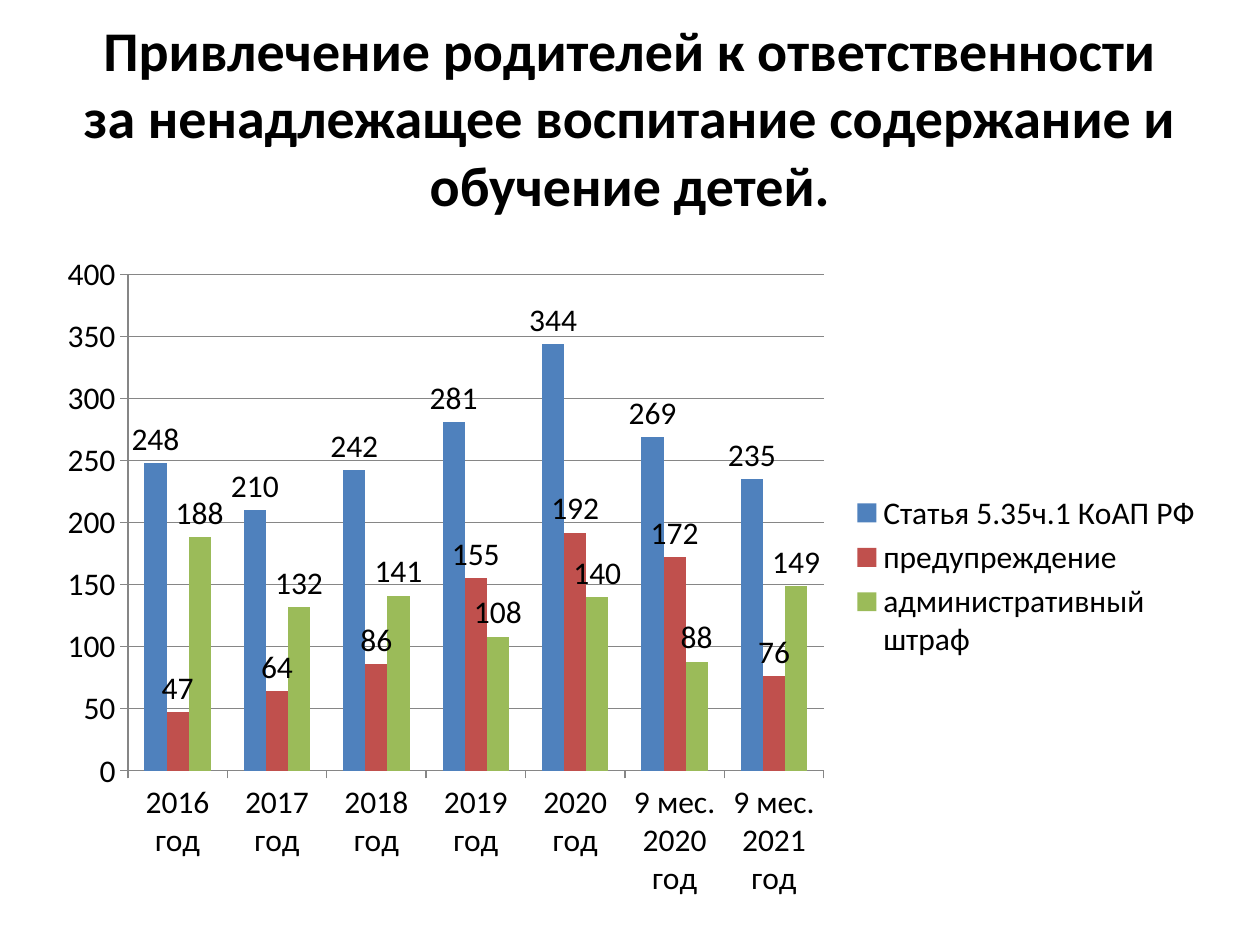
from pptx import Presentation
from pptx.chart.data import CategoryChartData
from pptx.dml.color import RGBColor
from pptx.enum.chart import XL_CHART_TYPE, XL_LABEL_POSITION, XL_LEGEND_POSITION, XL_TICK_MARK
from pptx.enum.text import MSO_ANCHOR, PP_ALIGN
from pptx.util import Pt

COLUMNS = XL_CHART_TYPE.COLUMN_CLUSTERED
LABEL_ABOVE = XL_LABEL_POSITION.OUTSIDE_END
LEGEND_RIGHT = XL_LEGEND_POSITION.RIGHT
TICK_OUT, TICK_NONE = XL_TICK_MARK.OUTSIDE, XL_TICK_MARK.NONE
MIDDLE, CENTER = MSO_ANCHOR.MIDDLE, PP_ALIGN.CENTER

FONT = "Calibri"
BLACK, GRAY = "000000", "868686"

TITLE = ("Привлечение родителей к ответственности за ненадлежащее "
         "воспитание содержание и обучение детей.")
PERIODS = [f"{year} год" for year in range(2016, 2021)]
PERIODS += [f"9 мес. {year} год" for year in (2020, 2021)]
PENALTIES = [
    ("Статья 5.35ч.1 КоАП РФ", "4F81BD", (248, 210, 242, 281, 344, 269, 235)),
    ("предупреждение", "C0504D", (47, 64, 86, 155, 192, 172, 76)),
    ("административный штраф", "9BBB59", (188, 132, 141, 108, 140, 88, 149)),
]


def rgb(value):
    return RGBColor.from_string(value)


def format_font(font, size, color=BLACK, bold=False):
    font.name = FONT
    font.size = Pt(size)
    font.bold = bold
    font.color.rgb = rgb(color)


def add_text(page, text, left, top, width, height, size=18, color=BLACK,
             bold=False, align=CENTER, anchor=MIDDLE):
    box = page.shapes.add_textbox(Pt(left), Pt(top), Pt(width), Pt(height))
    frame = box.text_frame
    frame.word_wrap = True
    frame.vertical_anchor = anchor
    para = frame.paragraphs[0]
    para.alignment = align
    span = para.add_run()
    span.text = text
    format_font(span.font, size, color, bold)


def format_line(line, color=GRAY, width=0.75):
    line.color.rgb = rgb(color)
    line.width = Pt(width)


def format_axes(chart):
    for axis in (chart.category_axis, chart.value_axis):
        axis.major_tick_mark = TICK_OUT
        axis.minor_tick_mark = TICK_NONE
        format_line(axis.format.line)
    scale = chart.value_axis
    scale.minimum_scale, scale.maximum_scale, scale.major_unit = 0, 400, 50
    scale.has_major_gridlines = True
    format_line(scale.major_gridlines.format.line)


def format_series(series, color):
    series.invert_if_negative = False
    series.format.fill.solid()
    series.format.fill.fore_color.rgb = rgb(color)
    labels = series.data_labels
    labels.show_value = True
    labels.position = LABEL_ABOVE


def add_column_chart(page, left, top, width, height):
    data = CategoryChartData()
    data.categories = PERIODS
    for name, _, values in PENALTIES:
        data.add_series(name, values)
    chart = page.shapes.add_chart(
        COLUMNS, Pt(left), Pt(top), Pt(width), Pt(height), data).chart
    format_font(chart.font, 18)
    chart.has_title = False

    # Legend
    chart.has_legend = True
    chart.legend.position = LEGEND_RIGHT
    chart.legend.include_in_layout = False

    # Axes and columns
    format_axes(chart)
    plot = chart.plots[0]
    plot.gap_width = 150
    plot.vary_by_categories = False
    for series, (_, color, _) in zip(plot.series, PENALTIES):
        format_series(series, color)


def main():
    deck = Presentation()
    deck.slide_width, deck.slide_height = Pt(720), Pt(540)
    page = deck.slides.add_slide(deck.slide_layouts[6])

    # Heading
    add_text(page, TITLE, 36, 21.6, 648, 90, size=32, bold=True)

    # Penalties by period
    add_column_chart(page, 25.2, 138.24, 669.6, 382.32)

    deck.save("out.pptx")


if __name__ == "__main__":
    main()
